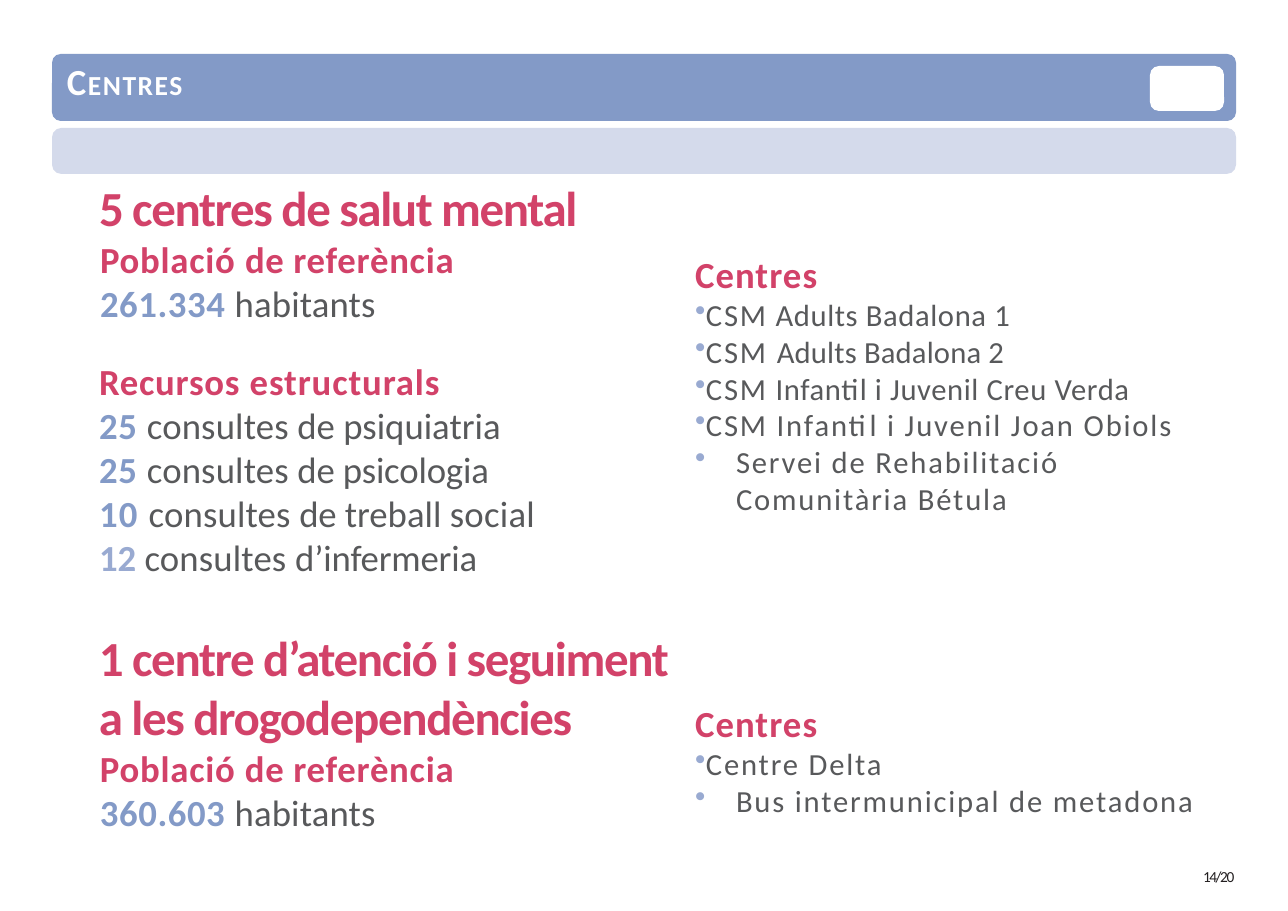
"""Build the slide that lists the mental health and drug dependency centres."""
from dataclasses import dataclass
from typing import NamedTuple

from lxml import etree
from pptx import Presentation
from pptx.dml.color import RGBColor
from pptx.enum.shapes import MSO_SHAPE
from pptx.enum.text import MSO_ANCHOR, PP_ALIGN
from pptx.oxml.ns import qn
from pptx.util import Emu, Pt

ROUNDED = MSO_SHAPE.ROUNDED_RECTANGLE
TOP = MSO_ANCHOR.TOP
LEFT = PP_ALIGN.LEFT

EMU_PER_PX = 8298
FONT = "Calibri"
BLUE = RGBColor(0x83, 0x9A, 0xC7)
LIGHT_BLUE = RGBColor(0x99, 0xAA, 0xD1)
PALE_BLUE = RGBColor(0xD4, 0xDA, 0xEB)
PINK = RGBColor(0xD2, 0x42, 0x69)
GREY = RGBColor(0x58, 0x59, 0x5B)
BLACK = RGBColor(0x23, 0x1F, 0x20)
WHITE = RGBColor(0xFF, 0xFF, 0xFF)


class Bar(NamedTuple):
    """Rounded bar, measured in px."""
    left: int
    top: int
    width: int
    height: int
    color: RGBColor


class Span(NamedTuple):
    """Run of text; spacing is in hundredths of a point."""
    text: str
    color: RGBColor
    bold: bool = False
    spacing: int = 0
    size: int | None = None


@dataclass(frozen=True)
class Line:
    """Paragraph; size and space before in points, indents in px."""
    size: int
    spans: list[Span]
    margin: int = 0
    indent: int = 0
    before: int = 0
    bullet: bool = False


@dataclass(frozen=True)
class Block:
    """Text box, measured in px."""
    left: int
    top: int
    width: int
    height: int
    lines: list[Line]
    inset_top: int = 0


def px(length: int) -> Emu:
    """Turn px into EMU."""
    return Emu(length * EMU_PER_PX)


def headline(text: str) -> Line:
    """Return a large pink headline."""
    return Line(32, [Span(text, PINK, True, -90)])


def population(number: str) -> list[Line]:
    """Return the reference population heading and its figure."""
    heading = [Span("Població ", PINK, True, 50), Span("de ", PINK, True, 40),
               Span("referència", PINK, True, 50)]
    figure = [Span(f"{number} ", BLUE, True, 40), Span("habitants", GREY, False, 10)]
    return [Line(24, heading, margin=1), Line(24, figure, margin=1)]


def resource(number: Span, *details: Span) -> Line:
    """Return a line that counts consulting rooms of one kind."""
    return Line(24, [number, Span("consultes ", GREY, False, 10), *details])


def centre(prefix: str, name: str = "", spacing: int = 120, margin: int = 0) -> Line:
    """Return a bulleted centre, its prefix widely spaced."""
    spans = [Span(prefix, GREY, False, 120)]
    if name:
        spans.append(Span(name, GREY, False, spacing))
    return Line(20, spans, margin, -42, bullet=True)


def centre_list(top: int, centres: list[Line]) -> Block:
    """Return a right-hand list of centres."""
    heading = Line(24, [Span("Centres", PINK, True, 70)])
    return Block(695, top, 523, 406, [heading, *centres], 18)


BARS = [
    Bar(52, 54, 1184, 67, BLUE),
    Bar(52, 128, 1184, 46, PALE_BLUE),
    Bar(1150, 66, 74, 45, WHITE),
]

BLOCKS = [
    Block(66, 58, 121, 153, [
        Line(24, [Span("C", WHITE, True, 100), Span("ENTRES", WHITE, True, 100, 18)],
             margin=1, before=1)], 1),
    Block(99, 147, 544, 501, [
        headline("5 centres de salut mental"),
        *population("261.334"),
        Line(24, [Span("Recursos ", PINK, True, 50),
                  Span("estructurals", PINK, True, 60)], before=22),
        resource(Span("25 ", BLUE, True, 50), Span("de psiquiatria", GREY)),
        resource(Span("25 ", BLUE, True, 50), Span("de psicologia", GREY, False, -10)),
        resource(Span("10 ", BLUE, True, 90), Span("de ", GREY, False, -10),
                 Span("treball ", GREY), Span("social", GREY, False, 20)),
        resource(Span("12 ", LIGHT_BLUE, True), Span("d’infermeria", GREY, False, -10)),
    ], 31),
    Block(1199, 867, 39, 36, [Line(10, [Span("14/20", BLACK, False, -90)], margin=4)]),
    centre_list(234, [
        centre("CSM", " Adults Badalona 1", 40),
        centre("CSM ", "Adults Badalona 2", 10),
        centre("CSM", " Infantil i Juvenil Creu Verda", 40),
        centre("CSM Infantil i Juvenil Joan Obiols"),
        centre("Servei de Rehabilitació Comunitària Bétula", margin=41),
    ]),
    Block(99, 623, 659, 278, [
        headline("1 centre d’atenció i seguiment"),
        headline("a les drogodependències"),
        *population("360.603"),
    ], 5),
    centre_list(683, [
        centre("Centre Delta"),
        centre("Bus intermunicipal de metadona", margin=41),
    ]),
]


def draw_bar(slide, bar: Bar) -> None:
    """Draw a rounded bar without outline."""
    shape = slide.shapes.add_shape(ROUNDED, px(bar.left), px(bar.top),
                                   px(bar.width), px(bar.height))
    shape.adjustments[0] = round(9 / bar.height, 2)
    shape.shadow.inherit = False
    shape.fill.solid()
    shape.fill.fore_color.rgb = bar.color
    shape.line.fill.background()


def write_line(paragraph, line: Line) -> None:
    """Write one paragraph with its indents, bullet and runs."""
    paragraph.alignment = LEFT
    paragraph.space_before = Pt(line.before)
    properties = paragraph._p.get_or_add_pPr()
    properties.set("marL", str(px(line.margin)))
    properties.set("indent", str(px(line.indent)))
    if line.bullet:
        bullet_color = etree.SubElement(properties, qn("a:buClr"))
        etree.SubElement(bullet_color, qn("a:srgbClr"), val=str(LIGHT_BLUE))
        etree.SubElement(properties, qn("a:buChar"), char="•")
    paragraph.font.name = FONT
    paragraph.font.size = Pt(line.size)
    for span in line.spans:
        run = paragraph.add_run()
        run.text = span.text
        run.font.bold = span.bold
        run.font.color.rgb = span.color
        if span.size:
            run.font.size = Pt(span.size)
        run._r.get_or_add_rPr().set("spc", str(span.spacing))


def draw_block(slide, block: Block) -> None:
    """Draw a text box with all its lines."""
    shape = slide.shapes.add_textbox(px(block.left), px(block.top),
                                     px(block.width), px(block.height))
    frame = shape.text_frame
    frame.word_wrap = True
    frame.vertical_anchor = TOP
    frame.margin_left = frame.margin_right = frame.margin_bottom = 0
    frame.margin_top = px(block.inset_top)
    for index, line in enumerate(block.lines):
        paragraph = frame.add_paragraph() if index else frame.paragraphs[0]
        write_line(paragraph, line)


def main() -> None:
    """Build and save the presentation."""
    presentation = Presentation()
    presentation.slide_width = px(1288)
    presentation.slide_height = px(911)
    slide = presentation.slides.add_slide(presentation.slide_layouts[6])
    for bar in BARS:
        draw_bar(slide, bar)
    for block in BLOCKS:
        draw_block(slide, block)
    presentation.save("out.pptx")


if __name__ == "__main__":
    main()
